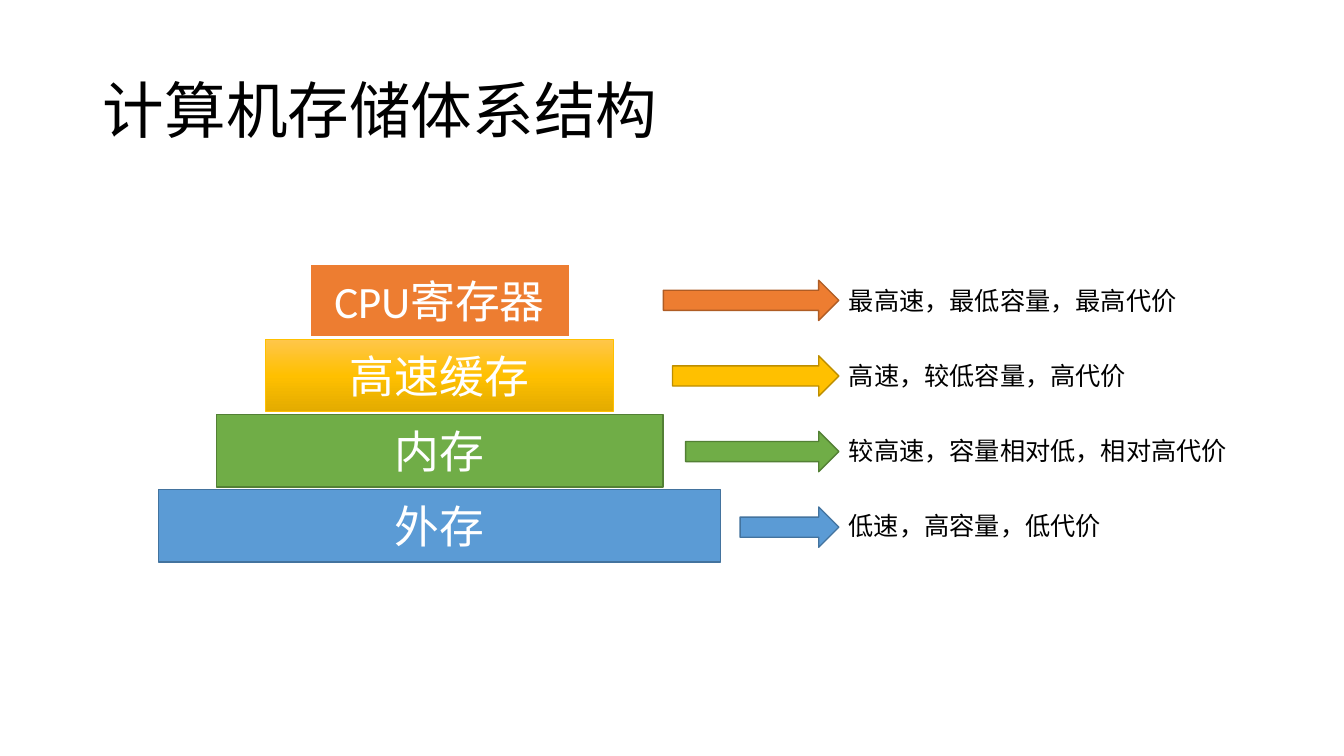
from copy import deepcopy
from dataclasses import dataclass

from pptx import Presentation
from pptx.dml.color import RGBColor as Rgb
from pptx.enum.shapes import MSO_SHAPE as Kind
from pptx.enum.text import MSO_ANCHOR as Anchor, MSO_AUTO_SIZE as Fit, PP_ALIGN as Align
from pptx.oxml.ns import qn
from pptx.util import Inches, Pt


@dataclass(frozen=True)
class Theme:
    font: str = "Calibri"
    ink: str = "000000"
    light: str = "FFFFFF"
    head: int = 44
    tier: int = 32
    note: int = 18
    fade: tuple = ((0, "FFC64B"), (0.5, "FFC000"), (1, "E3AB00"))


@dataclass(frozen=True)
class Tier:
    name: str
    note: str
    wide: float
    start: float
    span: float
    fill: str
    edge: str
    rim: str
    rim_pt: float
    fade: tuple = ()


THEME = Theme()
TIERS = (
    Tier("CPU寄存器", "最高速，最低容量，最高代价", 2.58, 6.58, 3.48,
         "ED7D31", "AF5C24", "FFFFFF", 1.5),
    Tier("高速缓存", "高速，较低容量，高代价", 3.45, 6.67, 2.98,
         "FFC000", "BD8E00", "FFC000", 0.5, THEME.fade),
    Tier("内存", "较高速，容量相对低，相对高代价", 4.43, 6.8, 3.99,
         "70AD47", "538035", "538035", 1),
    Tier("外存", "低速，高容量，低代价", 5.57, 7.34, 2.73,
         "5B9BD5", "43739E", "43739E", 1),
)
MID = 4.36
TOP, STEP, HIGH = 2.62, 0.745, 0.72
SIDE, SIDE_STEP, SIDE_HIGH = 2.78, 0.75, 0.4
NOTE_X = 8.32


def write(shape, text: str, *, size: int, color: str = THEME.ink, align=Align.LEFT,
          anchor=Anchor.MIDDLE, wrap: bool = True, fit=Fit.NONE, space: float = 1.0) -> None:
    frame = shape.text_frame
    frame.word_wrap = wrap
    frame.auto_size = fit
    frame.vertical_anchor = anchor
    para = frame.paragraphs[0]
    para.alignment = align
    para.line_spacing = space
    run = para.add_run()
    run.text = text
    run.font.name = THEME.font
    run.font.size = Pt(size)
    run.font.color.rgb = Rgb.from_string(color)


def block(slide, kind, box: tuple, fill: str, line: str, weight: float):
    shape = slide.shapes.add_shape(kind, *map(Inches, box))
    shape.shadow.inherit = False
    shape.fill.solid()
    shape.fill.fore_color.rgb = Rgb.from_string(fill)
    shape.line.color.rgb = Rgb.from_string(line)
    shape.line.width = Pt(weight)
    return shape


def shade(shape, stops: tuple) -> None:
    """Fill a shape with a three-stop gradient that runs downwards."""
    shape.fill.gradient()
    shape.fill.gradient_angle = 270
    marks = shape.element.spPr.find(".//" + qn("a:gsLst"))
    marks.append(deepcopy(marks[0]))
    for mark, (place, color) in zip(shape.fill.gradient_stops, stops):
        mark.position = place
        mark.color.rgb = Rgb.from_string(color)


def draw_tier(slide, tier: Tier, row: int) -> None:
    box = (MID - tier.wide / 2, TOP + row * STEP, tier.wide, HIGH)
    shape = block(slide, Kind.RECTANGLE, box, tier.fill, tier.rim, tier.rim_pt)
    if tier.fade:
        shade(shape, tier.fade)
    write(shape, tier.name, size=THEME.tier, color=THEME.light, align=Align.CENTER)


def draw_note(slide, tier: Tier, row: int) -> None:
    box = (NOTE_X, SIDE + row * STEP, tier.span, SIDE_HIGH)
    label = slide.shapes.add_textbox(*map(Inches, box))
    write(label, tier.note, size=THEME.note, anchor=Anchor.TOP,
          wrap=False, fit=Fit.SHAPE_TO_FIT_TEXT)


def draw_arrow(slide, tier: Tier, row: int) -> None:
    box = (tier.start, SIDE + row * SIDE_STEP, NOTE_X - tier.start, SIDE_HIGH)
    block(slide, Kind.RIGHT_ARROW, box, tier.fill, tier.edge, 1)


def main() -> None:
    deck = Presentation()
    deck.slide_width, deck.slide_height = Inches(13.33), Inches(7.5)
    slide = deck.slides.add_slide(deck.slide_layouts[5])
    title = slide.shapes.title
    title.left, title.top = Inches(0.92), Inches(0.4)
    title.width, title.height = Inches(11.5), Inches(1.45)
    write(title, "计算机存储体系结构", size=THEME.head, space=0.9)
    for draw in (draw_tier, draw_note, draw_arrow):
        for row, tier in enumerate(TIERS):
            draw(slide, tier, row)
    deck.save("out.pptx")


if __name__ == "__main__":
    main()
